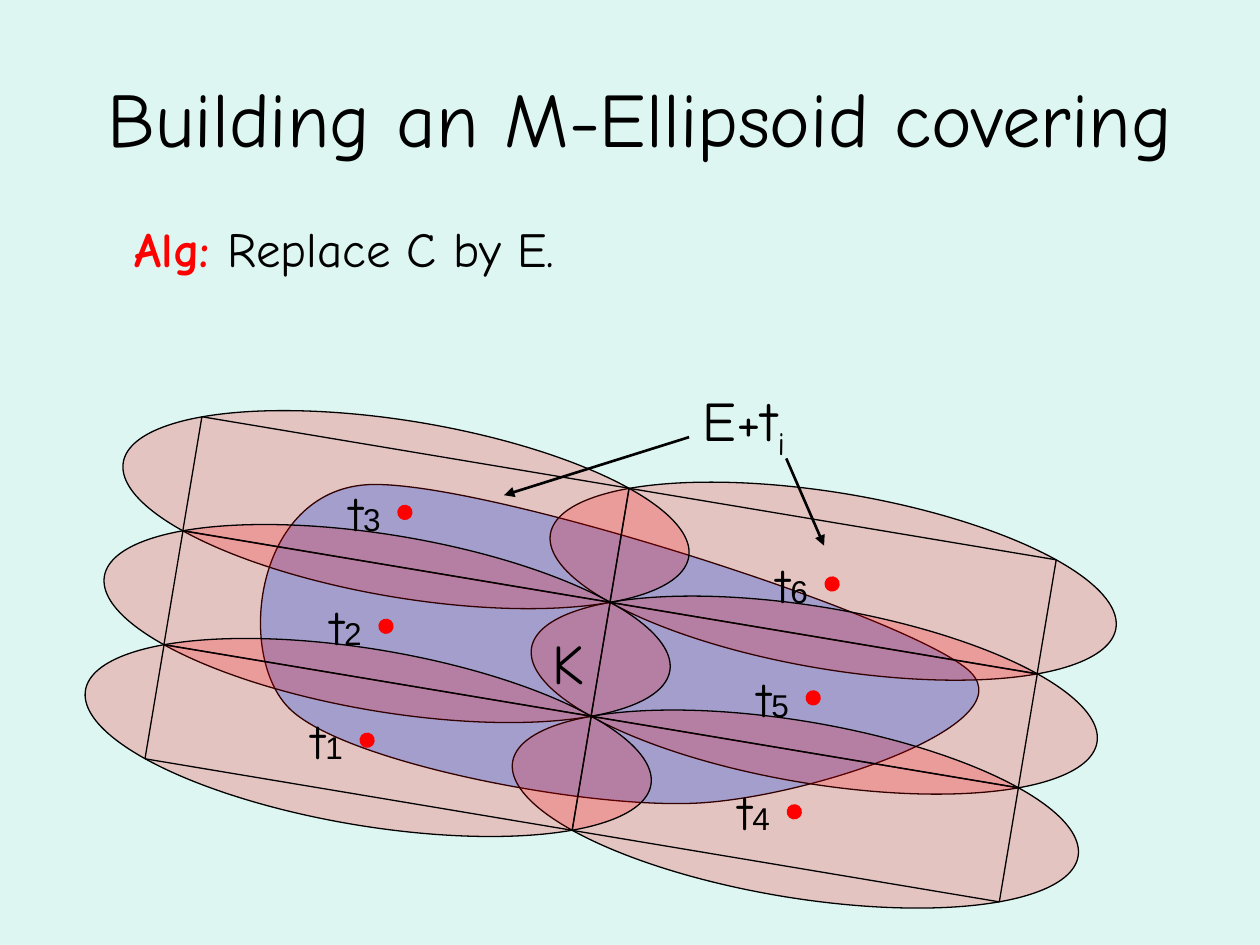
from lxml.etree import SubElement
from pptx import Presentation
from pptx.dml.color import RGBColor
from pptx.enum.shapes import MSO_CONNECTOR as Connector, MSO_SHAPE as Preset
from pptx.enum.text import MSO_ANCHOR as Anchor, MSO_AUTO_SIZE as AutoSize, PP_ALIGN as Align
from pptx.oxml.ns import qn
from pptx.util import Pt

COLORS = {"page": "DEF6F1", "body": "8DC6FF", "red": "FF0000", "ink": "000000"}
TILT = 9.5


def rgb(name):
    return RGBColor.from_string(COLORS[name])


class Sketch:
    font = "Comic Neue"
    thin, thick = 0.75, 1.5

    def __init__(self, page):
        self.page = page
        page.background.fill.solid()
        page.background.fill.fore_color.rgb = rgb("page")

    def paint(self, shape, fill, line="ink", alpha=None):
        shape.shadow.inherit = False
        shape.line.color.rgb = rgb(line)
        shape.line.width = Pt(self.thin)
        if fill is None:
            shape.fill.background()
            return
        shape.fill.solid()
        shape.fill.fore_color.rgb = rgb(fill)
        if alpha:
            color = shape._element.spPr.find(qn("a:solidFill")).find(qn("a:srgbClr"))
            SubElement(color, qn("a:alpha")).set("val", str(alpha * 1000))

    def span(self, para, text, size, color="ink", font=None, bold=None, baseline=None):
        span = para.add_run()
        span.text = text
        span.font.size, span.font.name = Pt(size), font or self.font
        span.font.color.rgb, span.font.bold = rgb(color), bold
        if baseline:
            span._r.get_or_add_rPr().set("baseline", str(baseline * 1000))

    def title(self, text, size, left, top, width, height):
        box = self.page.shapes.title
        box.left, box.top, box.width, box.height = map(Pt, (left, top, width, height))
        box.text_frame.vertical_anchor = Anchor.MIDDLE
        para = box.text_frame.paragraphs[0]
        para.alignment = Align.CENTER
        self.span(para, text, size)

    def textbox(self, left, top, width, height, wrap=False):
        box = self.page.shapes.add_textbox(*map(Pt, (left, top, width, height)))
        frame = box.text_frame
        frame.word_wrap = wrap
        frame.auto_size = AutoSize.NONE if wrap else AutoSize.SHAPE_TO_FIT_TEXT
        return frame.paragraphs[0]

    def centered(self, group, preset, center, size, fill, line="ink", alpha=None):
        (x, y), (width, height) = center, size
        box = map(Pt, (x - width / 2, y - height / 2, width, height))
        shape = group.shapes.add_shape(preset, *box)
        shape.rotation = TILT
        self.paint(shape, fill, line, alpha)

    def curved_outline(self, points, fill):
        """Closed outline of cubic curves: a start, then three points per curve."""
        start, *rest = [(Pt(x), Pt(y)) for x, y in points]
        builder = self.page.shapes.build_freeform(*start)
        builder.add_line_segments(rest, close=True)
        shape = builder.convert_to_shape()
        outline = next(shape._element.iter(qn("a:path")))
        steps = outline.findall(qn("a:lnTo"))
        for first in range(0, len(rest), 3):
            curve = SubElement(outline, qn("a:cubicBezTo"))
            for step in steps[first:first + 3]:
                curve.append(step[0])
                outline.remove(step)
        outline.append(outline.find(qn("a:close")))
        self.paint(shape, fill)

    def arrow(self, start, end):
        arrow = self.page.shapes.add_connector(Connector.STRAIGHT, *map(Pt, (*start, *end)))
        arrow.line.color.rgb = rgb("ink")
        arrow.line.width = Pt(self.thick)
        frame = arrow._element.spPr
        SubElement(frame.find(qn("a:ln")), qn("a:tailEnd")).set("type", "triangle")
        SubElement(frame, qn("a:effectLst"))


def main():
    deck = Presentation()
    deck.slide_width, deck.slide_height = Pt(720), Pt(540)
    sketch = Sketch(deck.slides.add_slide(deck.slide_layouts[5]))
    sketch.title("Building an M-Ellipsoid covering", 44, 36, 21.6, 660, 90)

    # Convex body K
    sketch.curved_outline(
        [(210, 277), (145.5, 281), (134.5, 374.5), (165.5, 405),
         (196.5, 435.5), (332.5, 462), (397.5, 459), (462, 456),
         (585.5, 414.5), (554.5, 384), (523.5, 353.5), (275, 273.5), (210, 277)], "body")

    # Two columns of three tilted cells: ellipsoid, center dot, inscribed box
    centers = {}
    for column in (1, 0):
        for row in range(3):
            number = 3 * column + 3 - row
            centers[number] = (232 + 244.1 * column - 10.8 * row,
                               291.2 + 40.9 * column + 65.1 * row)
    covering = sketch.page.shapes.add_group_shape()
    for x, y in centers.values():
        sketch.centered(covering, Preset.OVAL, (x, y), (327.6, 100.8), "red", alpha=20)
        sketch.centered(covering, Preset.OVAL, (x - 0.6, y + 1.6), (8, 8), "red", "red")
        sketch.centered(covering, Preset.RECTANGLE, (x, y), (247.5, 66.2), None)

    # Algorithm step
    para = sketch.textbox(69.8, 125.3, 445.7, 40.3, wrap=True)
    para.line_spacing, para.space_before = 0.9, Pt(5.6)
    indent = para._p.get_or_add_pPr()
    indent.set("marL", str(Pt(27)))
    indent.set("indent", str(Pt(-27)))
    sketch.span(para, "Alg: ", 28, "red", bold=True)
    sketch.span(para, "Replace C by E.", 28, bold=False)

    # Names of the body and of the translated ellipsoids
    sketch.span(sketch.textbox(308.9, 355.7, 33.8, 45.4), "K", 32)
    para = sketch.textbox(394.6, 216.7, 70.6, 45.4)
    sketch.span(para, "E+t", 32)
    sketch.span(para, "i", 32, baseline=-25)
    sketch.arrow((393.8, 249.8), (288, 283))
    sketch.arrow((449.3, 262), (470.9, 311.8))

    # Center labels
    for number, (x, y) in centers.items():
        para = sketch.textbox(x - 39.6, y - 19, 37.4, 41)
        sketch.span(para, "t", 28)
        sketch.span(para, str(number), 18, font="Arial")

    deck.save("out.pptx")


if __name__ == "__main__":
    main()
